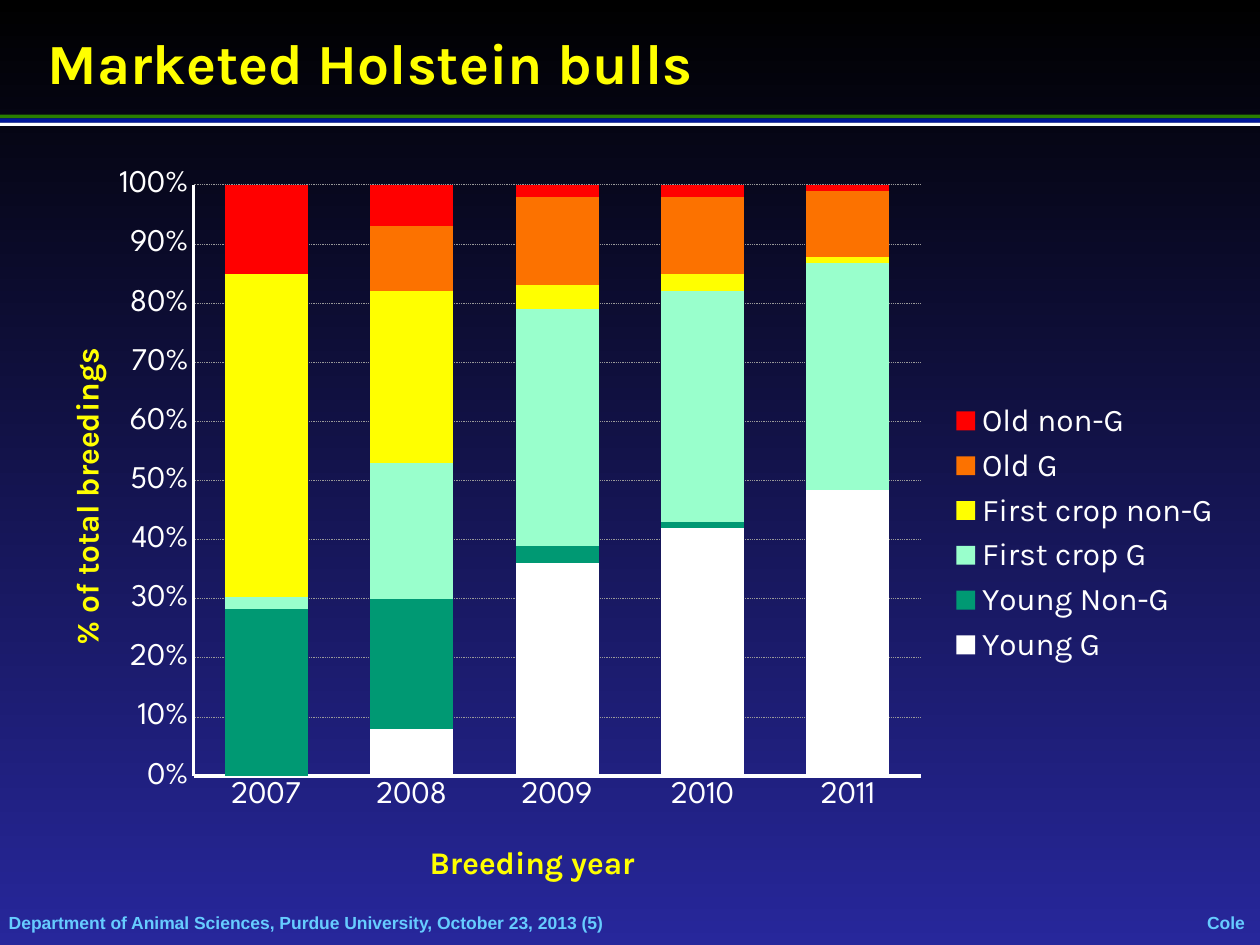
from dataclasses import dataclass

from lxml import etree
from pptx import Presentation
from pptx.chart import data
from pptx.dml.color import RGBColor
from pptx.enum import chart as charts, dml, shapes, text
from pptx.oxml import ns
from pptx.util import Pt


@dataclass
class Theme:
    white: RGBColor = RGBColor(0xFF, 0xFF, 0xFF)
    black: RGBColor = RGBColor(0, 0, 0)
    navy: RGBColor = RGBColor(0x27, 0x27, 0x9B)
    yellow: RGBColor = RGBColor(0xFF, 0xFF, 0)
    sky: RGBColor = RGBColor(0x66, 0xCC, 0xFF)
    blue: RGBColor = RGBColor(0, 0x17, 0x99)
    green: RGBColor = RGBColor(0x2A, 0x7E, 0)
    teal: RGBColor = RGBColor(0, 0x99, 0x73)
    mint: RGBColor = RGBColor(0x99, 0xFF, 0xCC)
    orange: RGBColor = RGBColor(0xFC, 0x72, 0)
    red: RGBColor = RGBColor(0xFF, 0, 0)
    grey: RGBColor = RGBColor(0x99, 0x99, 0x99)
    heading: float = 32.4
    label: float = 18
    footer: float = 10


theme = Theme()


def style(font, name, size, color, bold=False):
    font.name, font.size, font.bold = name, Pt(size), bold
    font.color.rgb = color


def place(element, index, **fractions):
    """Give a chart part a fixed position, as fractions of the chart."""
    layout = element.find(ns.qn("c:layout"))
    if layout is None:
        layout = etree.Element(ns.qn("c:layout"))
        element.insert(index, layout)
    manual = etree.SubElement(layout, ns.qn("c:manualLayout"))
    settings = {"xMode": "edge", "yMode": "edge", **fractions}
    if element.tag == ns.qn("c:plotArea"):
        settings = {"layoutTarget": "inner", **settings}
    for key, value in settings.items():
        etree.SubElement(manual, ns.qn(f"c:{key}")).set("val", str(value))


prs = Presentation()
prs.slide_width, prs.slide_height = Pt(720), Pt(540)
slide = prs.slides.add_slide(prs.slide_layouts[6])

# Background, black at the top to navy
backdrop = slide.background.fill
backdrop.gradient()
backdrop.gradient_angle = 270
for stop, position, color in zip(backdrop.gradient_stops, (0, 1), (theme.black, theme.navy)):
    stop.position = position
    stop.color.rgb = color

# Stripes under the heading
for top, height, color in ((65.5, 2.2, theme.green), (70, 2, theme.white), (67.7, 2.5, theme.blue)):
    stripe = slide.shapes.add_shape(shapes.MSO_SHAPE.RECTANGLE, 0, Pt(top), Pt(720), Pt(height))
    stripe.shadow.inherit = False
    stripe.fill.solid()
    stripe.fill.fore_color.rgb = color
    stripe.line.fill.background()

# Heading and footers: words, box, insets, wrap, font, size, colour
lines = (
    ("Marketed Holstein bulls", (20.2, 13.7, 648, 43.2), (7.2, 3.6), True,
     "Karla", theme.heading, theme.yellow),
    ("Department of Animal Sciences, Purdue University, October 23, 2013 (5)",
     (5, 521.3, 582.5, 12.2), (0, 0), True, "Arial", theme.footer, theme.sky),
    ("Cole", (689.8, 521, 21.6, 12.2), (0, 0), False, "Arial", theme.footer, theme.sky),
)
for words, box, (side, edge), wrap, font_name, size, color in lines:
    frame = slide.shapes.add_textbox(*map(Pt, box)).text_frame
    frame.margin_left = frame.margin_right = Pt(side)
    frame.margin_top = frame.margin_bottom = Pt(edge)
    frame.vertical_anchor = text.MSO_ANCHOR.MIDDLE
    frame.word_wrap = wrap
    frame.text = words
    line = frame.paragraphs[0]
    line.alignment = text.PP_ALIGN.LEFT if wrap else text.PP_ALIGN.CENTER
    style(line.runs[0].font, font_name, size, color, True)

# Share of breedings by bull group, bottom of the stack first
groups = (
    ("Young G", (0, 8, 36, 42, 48), theme.white),
    ("Young Non-G", (28, 22, 3, 1, 0), theme.teal),
    ("First crop G", (2, 23, 40, 39, 38), theme.mint),
    ("First crop non-G", (54, 29, 4, 3, 1), theme.yellow),
    ("Old G", (0, 11, 15, 13, 11), theme.orange),
    ("Old non-G", (15, 7, 2, 2, 1), theme.red),
)
breedings = data.CategoryChartData(number_format="0")
breedings.categories = [str(year) for year in range(2007, 2012)]
for name, shares, color in groups:
    breedings.add_series(name, shares)
chart = slide.shapes.add_chart(
    charts.XL_CHART_TYPE.COLUMN_STACKED_100, Pt(13.7), Pt(88.6), Pt(692.6), Pt(427.7), breedings
).chart
style(chart.font, "Karla", theme.label, theme.white)
chart.has_title = False
columns = chart.plots[0]
columns.gap_width, columns.overlap, columns.vary_by_categories = 75, 100, False
for series, (name, shares, color) in zip(columns.series, groups):
    series.format.fill.solid()
    series.format.fill.fore_color.rgb = color
place(chart.plots[0]._element.getparent(), 0, x=0.14, y=0.04, w=0.6, h=0.79)

# Axes and their titles
years, percent = chart.category_axis, chart.value_axis
for axis, title, x, y in ((years, "Breeding year", 0.33, 0.91),
                          (percent, "% of total breedings", 0.03, 0.25)):
    axis.major_tick_mark = axis.minor_tick_mark = charts.XL_TICK_MARK.NONE
    axis.format.line.color.rgb = theme.white
    axis.format.line.width = Pt(2)
    style(axis.tick_labels.font, "League Spartan", theme.label, theme.white)
    axis.axis_title.text_frame.text = title
    style(axis.axis_title.text_frame.paragraphs[0].runs[0].font,
          "Karla", theme.label, theme.yellow, True)
    place(axis.axis_title._element, 1, x=x, y=y)
percent.minimum_scale, percent.maximum_scale, percent.major_unit = 0, 1, 0.1
percent.tick_labels.number_format = "0%"
percent.tick_labels.number_format_is_linked = False
percent.has_major_gridlines = True
grid = percent.major_gridlines.format.line
grid.color.rgb = theme.grey
grid.width = Pt(0.5)
grid.dash_style = dml.MSO_LINE.ROUND_DOT

# Legend
chart.has_legend = True
chart.legend.position = charts.XL_LEGEND_POSITION.RIGHT
chart.legend.include_in_layout = False
style(chart.legend.font, "Karla", theme.label, theme.white)
place(chart.legend._element, 1, x=0.76, y=0.32, w=0.23, h=0.37)

prs.save("out.pptx")
